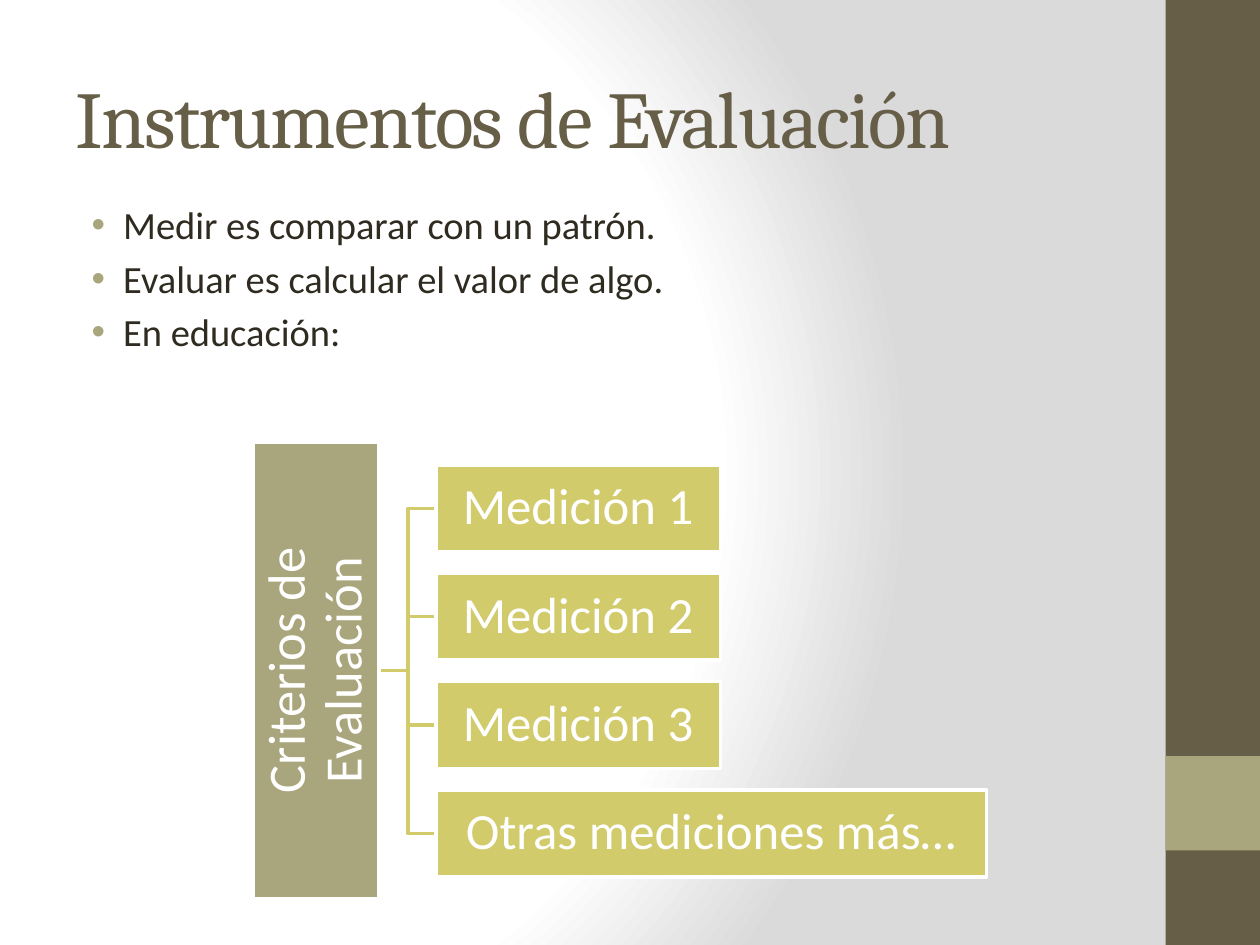
import pptx
import pptx.util
import pptx.oxml
import pptx.oxml.ns
import pptx.dml.color
import pptx.enum.shapes
import pptx.enum.text
from lxml import etree

Inches = pptx.util.Inches
Pt = pptx.util.Pt
ALIGN = pptx.enum.text.PP_ALIGN
ANCHOR = pptx.enum.text.MSO_ANCHOR
COLORS = {
    "brown": "675E47",
    "olive": "A9A57C",
    "lime": "D2CB6C",
    "ink": "2F2B20",
    "white": "FFFFFF",
    "grey": "DADADA",
}


def rgb(name):
    return pptx.dml.color.RGBColor.from_string(COLORS[name])


def write(shape, lines, size, color, font="Calibri", align=ALIGN.LEFT, anchor=ANCHOR.TOP,
          inset=None, line_spacing=None, before=0, tracking=None, bullet=None):
    frame = shape.text_frame
    frame.word_wrap = True
    frame.vertical_anchor = anchor
    if inset is not None:
        frame.margin_left = frame.margin_right = Inches(inset)
        frame.margin_top = frame.margin_bottom = Inches(inset)
    for index, line in enumerate(lines):
        paragraph = frame.add_paragraph() if index else frame.paragraphs[0]
        paragraph.alignment = align
        paragraph.space_before = Pt(before)
        if line_spacing:
            paragraph.line_spacing = line_spacing
        run = paragraph.add_run()
        run.text = line
        run.font.name = font
        run.font.size = Pt(size)
        run.font.color.rgb = rgb(color)
        if tracking:
            run.font._element.set("spc", str(tracking))
        if bullet:
            properties = paragraph._p.get_or_add_pPr()
            properties.set("marL", str(Inches(0.38)))
            properties.set("indent", str(Inches(-0.25)))
            bullet_color = etree.SubElement(properties, pptx.oxml.ns.qn("a:buClr"))
            etree.SubElement(bullet_color, pptx.oxml.ns.qn("a:srgbClr"), val=COLORS[bullet])
            etree.SubElement(properties, pptx.oxml.ns.qn("a:buFont"), typeface="Arial")
            etree.SubElement(properties, pptx.oxml.ns.qn("a:buChar"), char="•")


def add_box(left, top, width, height, fill, outline=None):
    box = slide.shapes.add_shape(pptx.enum.shapes.MSO_SHAPE.RECTANGLE,
                                 Inches(left), Inches(top), Inches(width), Inches(height))
    box.shadow.inherit = False
    box.fill.solid()
    box.fill.fore_color.rgb = rgb(fill)
    if outline:
        box.line.color.rgb = rgb(outline)
        box.line.width = Pt(2)
    else:
        box.line.fill.background()
    return box


deck = pptx.Presentation()
deck.slide_width = Inches(10)
deck.slide_height = Inches(7.5)
slide = deck.slides.add_slide(deck.slide_layouts[6])

slide.background.fill.gradient()
gradient = slide._element.find(".//" + pptx.oxml.ns.qn("a:gradFill"))
stops = "".join(
    f'<a:gs pos="{position * 1000}"><a:srgbClr val="{COLORS[name]}"/></a:gs>'
    for position, name in ((0, "white"), (75, "white"), (100, "grey"))
)
gradient.getparent().replace(gradient, pptx.oxml.parse_xml(
    f'<a:gradFill {pptx.oxml.ns.nsdecls("a")} rotWithShape="1"><a:gsLst>{stops}</a:gsLst>'
    '<a:path path="circle"><a:fillToRect l="20000" t="50000" r="100000" b="50000"/></a:path>'
    '</a:gradFill>'))

add_box(9.25, 0, 0.75, 7.5, "brown")
add_box(9.25, 6, 0.75, 0.75, "olive")

title = slide.shapes.add_textbox(Inches(0.5), Inches(0.3), Inches(8.33), Inches(1.25))
write(title, ["Instrumentos de Evaluación"], 46, "brown", font="Cambria",
      anchor=ANCHOR.MIDDLE, tracking=-100)

ideas = slide.shapes.add_textbox(Inches(0.5), Inches(1.55), Inches(9), Inches(2.44))
write(ideas, ["Medir es comparar con un patrón.", "Evaluar es calcular el valor de algo.",
              "En educación:"], 22, "ink", before=4, bullet="olive")

measures = [("Medición 1", 2.26), ("Medición 2", 2.26), ("Medición 3", 2.26),
            ("Otras mediciones más…", 4.37)]
first_top, pitch, measure_height = 3.69, 0.86, 0.69
root_x, trunk_x, measure_x, root_y = 3.01, 3.24, 3.46, 5.32

for row in reversed(range(len(measures))):
    branch_y = first_top + row * pitch + measure_height / 2
    builder = slide.shapes.build_freeform(Inches(root_x), Inches(root_y))
    builder.add_line_segments([(Inches(trunk_x), Inches(root_y)),
                               (Inches(trunk_x), Inches(branch_y)),
                               (Inches(measure_x), Inches(branch_y))], close=False)
    branch = builder.convert_to_shape()
    branch.shadow.inherit = False
    branch.fill.background()
    branch.line.color.rgb = rgb("lime")
    branch.line.width = Pt(2)

box_text = dict(color="white", align=ALIGN.CENTER, anchor=ANCHOR.MIDDLE,
                inset=0.02, line_spacing=0.9)
criteria = add_box(0.7, 4.82, 3.62, 1, "olive", "white")
criteria.rotation = 270
write(criteria, ["Criterios de Evaluación"], 30, **box_text)

for row, (label, width) in enumerate(measures):
    measure = add_box(measure_x, first_top + row * pitch, width, measure_height, "lime", "white")
    write(measure, [label], 29, **box_text)

deck.save("out.pptx")
